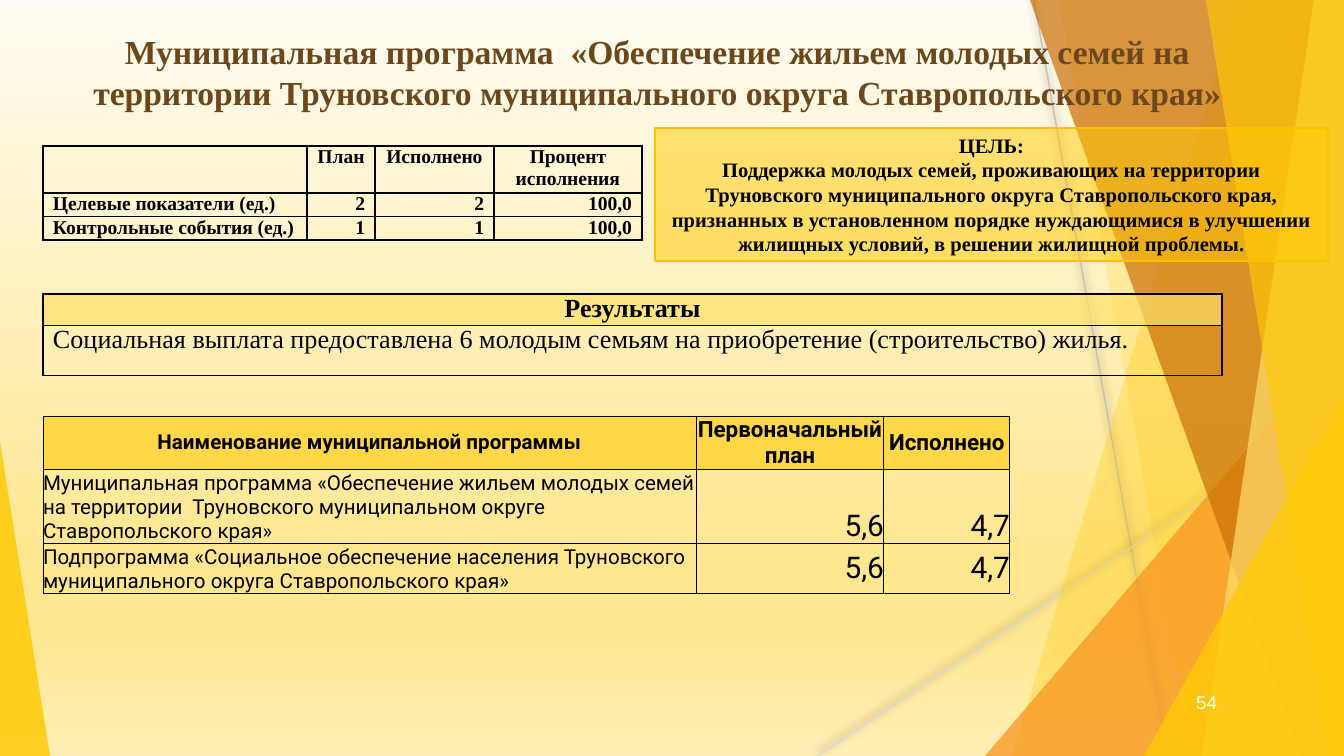
from lxml import etree
from pptx import Presentation
from pptx.dml.color import RGBColor
from pptx.enum.shapes import MSO_CONNECTOR, MSO_SHAPE
from pptx.enum.text import MSO_ANCHOR as ANCHOR, PP_ALIGN as ALIGN
from pptx.oxml import parse_xml
from pptx.oxml.ns import nsdecls, qn
from pptx.util import Pt

PX = 9144000 / 1344  # EMU in one px
W, H = 1344, 756

BLACK = RGBColor(0x00, 0x00, 0x00)
WHITE = RGBColor(0xFF, 0xFF, 0xFF)
BROWN = RGBColor(0x6B, 0x47, 0x1B)
GOLD = RGBColor(0xFF, 0xCA, 0x08)
PALE = RGBColor(0xFF, 0xDF, 0x6B)
ORANGE = RGBColor(0xF8, 0x93, 0x1D)
RUST = RGBColor(0xCA, 0x6F, 0x06)
AMBER = RGBColor(0xFF, 0xC0, 0x00)
GREY = RGBColor(0xBF, 0xBF, 0xBF)
SILVER = RGBColor(0xD9, 0xD9, 0xD9)
BACKGROUND = [(0, RGBColor(0xFF, 0xFC, 0xF3)), (74, RGBColor(0xFF, 0xE7, 0x90)),
              (83, RGBColor(0xFF, 0xE7, 0x90)), (100, RGBColor(0xFF, 0xEF, 0xB5))]

# Decoration: rays (from, to, colour), then facets with fill and opacity in %
RAYS = [((1034, 0), (1168, H), GREY), ((W, 406), (818, H), SILVER)]
# A band reaches the right edge; its slanted left side has a top x and a bottom x
BANDS_BACK = [(1238, 1012, GOLD, 30), (1059, 1192, GOLD, 20)]
BANDS_FRONT = [(1030, 1301, RUST, 70), (1314, 1202, PALE, 70), (1206, 1328, GOLD, 65)]
# Triangle: left, top, width, apex position, fill, opacity; all stand on the bottom edge
TRIANGLE_BACK = [(985, 336, 359, 1, ORANGE, 72)]
TRIANGLES_FRONT = [(1144, 395, 200, 1, GOLD, 80), (0, 442, 50, 0, GOLD, 85)]

SERIF, SANS = "Times New Roman", "Roboto"
TITLE = ("Муниципальная программа  «Обеспечение жильем молодых семей на "
         "территории Труновского муниципального округа Ставропольского края»")
GOAL = ["ЦЕЛЬ:",
        "Поддержка молодых семей, проживающих на территории Труновского "
        "муниципального округа Ставропольского края, признанных в установленном "
        "порядке нуждающимися в улучшении жилищных условий, в решении жилищной проблемы."]
PAGE = "54"


def style(name, size, bold, align, anchor=ANCHOR.TOP, color=BLACK):
    font = {"name": name, "size": Pt(size), "bold": bold}
    return {"font": font, "color": color, "align": align, "anchor": anchor}


TITLE_STYLE = style(SERIF, 18, True, ALIGN.CENTER, ANCHOR.MIDDLE, BROWN)
GOAL_STYLE = style(SERIF, 11, True, ALIGN.CENTER, ANCHOR.MIDDLE)
PAGE_STYLE = style("Arial", 10, False, ALIGN.LEFT, color=WHITE)
HEAD = style(SERIF, 10.5, True, ALIGN.CENTER)
LABEL = style(SERIF, 10.5, True, ALIGN.JUSTIFY)
COUNT = style(SERIF, 10.5, True, ALIGN.RIGHT)
RESULT_HEAD = style(SERIF, 14, True, ALIGN.CENTER)
RESULT = style(SERIF, 14, False, ALIGN.JUSTIFY)
NAME_HEAD = style(SANS, 11, True, ALIGN.CENTER, ANCHOR.MIDDLE)
SUM_HEAD = style(SANS, 12, True, ALIGN.CENTER, ANCHOR.MIDDLE)
NAME = style(SANS, 11, False, ALIGN.LEFT, ANCHOR.BOTTOM)
SUM_LOW = style(SANS, 16, False, ALIGN.RIGHT, ANCHOR.BOTTOM)
SUM_MID = style(SANS, 16, False, ALIGN.RIGHT, ANCHOR.MIDDLE)

# Each table row: height, fill, texts, styles
TABLES = [
    {"top": 416, "cols": [653, 188, 126], "inset": 0, "border": 0.5, "rows": [
        (53, (GOLD, 59), ["Наименование муниципальной программы", "Первоначальный план",
                          "Исполнено"], [NAME_HEAD, SUM_HEAD, SUM_HEAD]),
        (72, None, ["Муниципальная программа «Обеспечение жильем молодых семей на территории  "
                    "Труновского муниципальном округе Ставропольского края»", "5,6", "4,7"],
         [NAME, SUM_LOW, SUM_LOW]),
        (49, None, ["Подпрограмма «Социальное обеспечение населения Труновского "
                    "муниципального округа Ставропольского края»", "5,6", "4,7"],
         [NAME, SUM_MID, SUM_MID])]},
    {"top": 146, "cols": [264, 68, 119, 148], "inset": 10, "border": 1, "rows": [
        (44, None, ["", "План", "Исполнено", "Процент исполнения"], [HEAD] * 4),
        (22, None, ["Целевые показатели (ед.)", "2", "2", "100,0"], [LABEL] + [COUNT] * 3),
        (22, None, ["Контрольные события (ед.)", "1", "1", "100,0"], [LABEL] + [COUNT] * 3)]},
    {"top": 294, "cols": [1179], "inset": 10, "border": 1, "rows": [
        (30, (PALE, 70), ["Результаты"], [RESULT_HEAD]),
        (50, None, ["Социальная выплата предоставлена 6 молодым семьям на приобретение "
                    "(строительство) жилья."], [RESULT])]},
]
TABLE_LEFT = 43


def emu(*values):
    return [round(v * PX) for v in values]


def paint(fill, color, opacity):
    fill.solid()
    fill.fore_color.rgb = color
    clr = fill._xPr.find(qn("a:solidFill"))[0]
    etree.SubElement(clr, qn("a:alpha"), val=str(opacity * 1000))


def write(tf, texts, fmt):
    tf.word_wrap = True
    for i, text in enumerate(texts):
        p = tf.paragraphs[0] if i == 0 else tf.add_paragraph()
        p.alignment = fmt["align"]
        r = p.add_run()
        r.text = text
        for key, value in fmt["font"].items():
            setattr(r.font, key, value)
        r.font.color.rgb = fmt["color"]


def add_text(slide, box, text, fmt):
    tf = slide.shapes.add_textbox(*emu(*box)).text_frame
    tf.vertical_anchor = fmt["anchor"]
    write(tf, [text], fmt)


def finish_facet(sp, color, opacity):
    sp.shadow.inherit = False
    sp.line.fill.background()
    paint(sp.fill, color, opacity)


def add_bands(slide, bands):
    for top_x, bottom_x, color, opacity in bands:
        builder = slide.shapes.build_freeform(top_x, 0, scale=PX)
        builder.add_line_segments([(W, 0), (W, H), (bottom_x, H)], close=True)
        finish_facet(builder.convert_to_shape(), color, opacity)


def add_triangles(slide, triangles):
    for left, top, width, apex, color, opacity in triangles:
        sp = slide.shapes.add_shape(MSO_SHAPE.ISOSCELES_TRIANGLE,
                                    *emu(left, top, width, H - top))
        sp.adjustments[0] = apex
        finish_facet(sp, color, opacity)


def add_ray(slide, start, end, color):
    line = slide.shapes.add_connector(MSO_CONNECTOR.STRAIGHT, *emu(*start, *end))
    line.line.color.rgb = color
    line.line.width = Pt(0.75)
    line._element.spPr.append(parse_xml(
        f'<a:effectLst {nsdecls("a")}><a:outerShdw blurRad="{Pt(5)}" dist="{Pt(2)}" '
        f'dir="{245 * 60000}"><a:srgbClr val="000000"><a:alpha val="50000"/></a:srgbClr>'
        '</a:outerShdw></a:effectLst>'))


def add_background(slide):
    stops = "".join(f'<a:gs pos="{pos * 1000}"><a:srgbClr val="{color}"/></a:gs>'
                    for pos, color in BACKGROUND)
    slide.element.cSld.insert(0, parse_xml(
        f'<p:bg {nsdecls("p", "a")}><p:bgPr><a:gradFill><a:gsLst>{stops}</a:gsLst>'
        f'<a:lin ang="{90 * 60000}" scaled="0"/></a:gradFill><a:effectLst/></p:bgPr></p:bg>'))


def add_borders(cell, width):
    for i, side in enumerate("LRTB"):
        cell._tc.get_or_add_tcPr().insert(i, parse_xml(
            f'<a:ln{side} {nsdecls("a")} w="{Pt(width)}"><a:solidFill>'
            f'<a:srgbClr val="{BLACK}"/></a:solidFill></a:ln{side}>'))


def add_grid(slide, spec_):
    cols, rows = spec_["cols"], spec_["rows"]
    box = emu(TABLE_LEFT, spec_["top"], sum(cols), sum(row[0] for row in rows))
    table = slide.shapes.add_table(len(rows), len(cols), *box).table
    table.first_row = table.horz_banding = False
    for column, width in zip(table.columns, emu(*cols)):
        column.width = width
    inset = emu(spec_["inset"])[0]
    margins = {"margin_left": inset, "margin_right": inset, "margin_top": 0, "margin_bottom": 0}
    for row, (height, fill, texts, styles) in zip(table.rows, rows):
        row.height = emu(height)[0]
        for cell, text, fmt in zip(row.cells, texts, styles):
            for key, value in margins.items():
                setattr(cell, key, value)
            cell.vertical_anchor = fmt["anchor"]
            if fill:
                paint(cell.fill, *fill)
            else:
                cell.fill.background()
            add_borders(cell, spec_["border"])
            write(cell.text_frame, [text], fmt)


def main():
    prs = Presentation()
    prs.slide_width, prs.slide_height = emu(W, H)
    s = prs.slides.add_slide(prs.slide_layouts[6])

    # Background and facets, from back to front
    add_background(s)
    for ray in RAYS:
        add_ray(s, *ray)
    add_bands(s, BANDS_BACK)
    add_triangles(s, TRIANGLE_BACK)
    add_bands(s, BANDS_FRONT)
    add_triangles(s, TRIANGLES_FRONT)

    # Title and tables
    add_text(s, (52, 23, 1211, 97), TITLE, TITLE_STYLE)
    for table in TABLES:
        add_grid(s, table)

    # Goal box
    sp = s.shapes.add_shape(MSO_SHAPE.RECTANGLE, *emu(655, 128, 673, 133))
    sp.shadow.inherit = False
    paint(sp.fill, GOLD, 50)
    sp.line.color.rgb = AMBER
    sp.line.width = Pt(1)
    sp.text_frame.vertical_anchor = GOAL_STYLE["anchor"]
    write(sp.text_frame, GOAL, GOAL_STYLE)

    # Page number
    add_text(s, (1183, 684, 75, 40), PAGE, PAGE_STYLE)
    prs.save("out.pptx")


if __name__ == "__main__":
    main()
